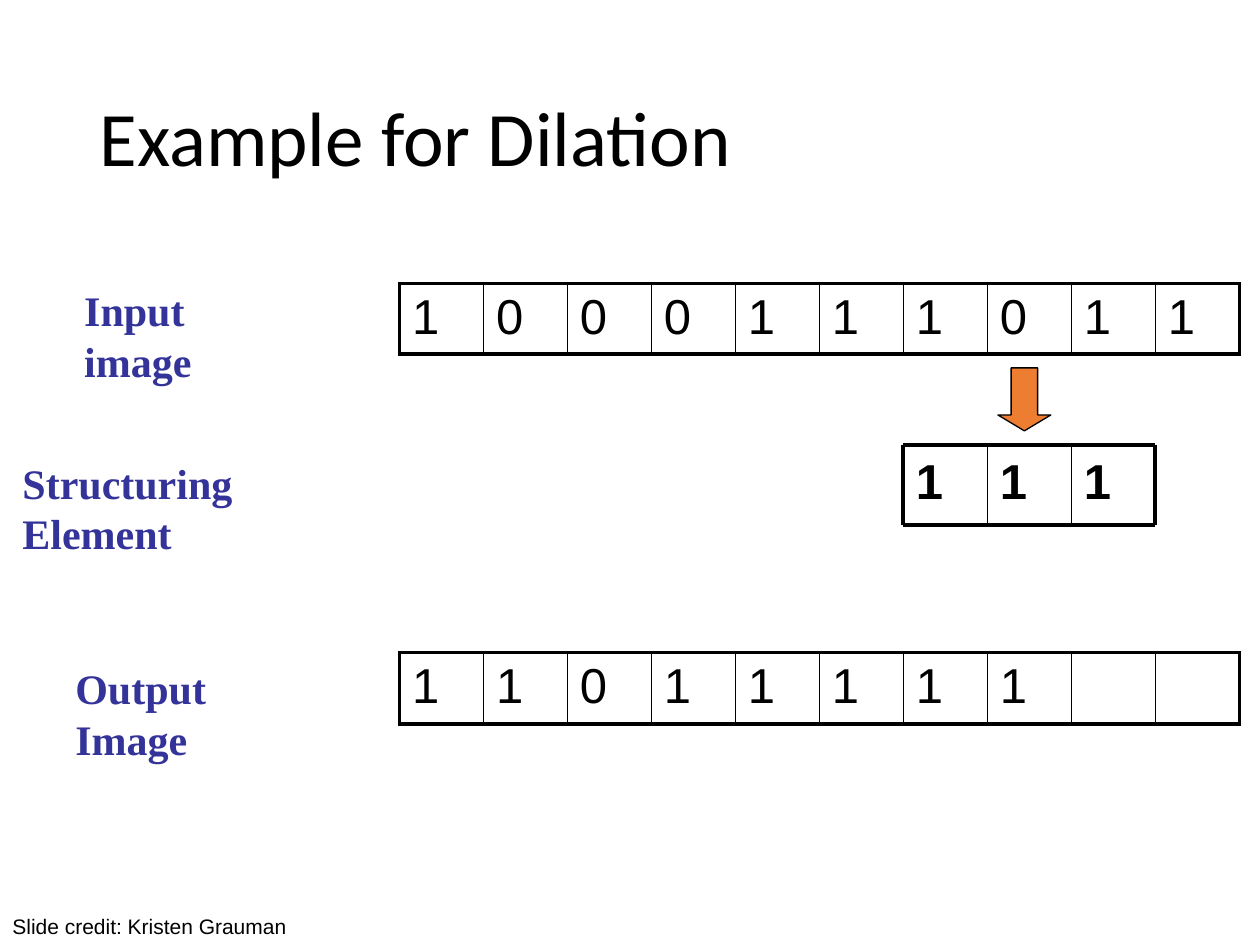
import pptx
import pptx.util
import pptx.dml.color
import pptx.enum.shapes
import pptx.enum.text
import pptx.oxml.ns
from lxml import etree
from pptx.util import Inches

COLORS = {"ink": "000000", "label": "333399", "arrow": "ED7D31"}
CELL = 2 / 3
THICK, THIN = 2.25, 1
GRID_LEFT = 3.17


def color(name):
    return pptx.dml.color.RGBColor.from_string(COLORS[name])


def add_run(paragraph, text, size, font="Arial", ink="ink", bold=False):
    run = paragraph.add_run()
    run.text = text
    run.font.size = pptx.util.Pt(size)
    run.font.name = font
    run.font.bold = bold
    run.font.color.rgb = color(ink)


def add_title(slide, text):
    title = slide.shapes.title
    title.left, title.top = Inches(0.69), Inches(0.4)
    title.width, title.height = Inches(8.62), Inches(1.45)
    title.text_frame.auto_size = pptx.enum.text.MSO_AUTO_SIZE.NONE
    title.text_frame.vertical_anchor = pptx.enum.text.MSO_ANCHOR.MIDDLE
    paragraph = title.text_frame.paragraphs[0]
    paragraph.alignment = pptx.enum.text.PP_ALIGN.LEFT
    paragraph.line_spacing = 0.9
    add_run(paragraph, text, 44, "Calibri")


def add_text(slide, text, left, top, width, height, size, **style):
    box = slide.shapes.add_textbox(Inches(left), Inches(top), Inches(width), Inches(height))
    box.text_frame.word_wrap = True
    add_run(box.text_frame.paragraphs[0], text, size, **style)


def add_label(slide, text, left, top, width):
    add_text(slide, text, left, top, width, 0.5, 24,
             font="Times New Roman", ink="label", bold=True)


def set_border(cell, side, weight):
    properties = cell._tc.get_or_add_tcPr()
    line = etree.SubElement(properties, pptx.oxml.ns.qn(f"a:ln{side}"),
                            w=str(int(pptx.util.Pt(weight))))
    fill = etree.SubElement(line, pptx.oxml.ns.qn("a:solidFill"))
    etree.SubElement(fill, pptx.oxml.ns.qn("a:srgbClr"), val=COLORS["ink"])


def add_pixel_row(slide, values, top):
    count = len(values)
    table = slide.shapes.add_table(1, count, Inches(GRID_LEFT), Inches(top),
                                   Inches(CELL * count), Inches(0.56)).table
    table.first_row = table.horz_banding = False
    for index, value in enumerate(values):
        table.columns[index].width = Inches(CELL)
        cell = table.cell(0, index)
        set_border(cell, "L", THICK if index == 0 else THIN)
        set_border(cell, "R", THICK if index == count - 1 else THIN)
        set_border(cell, "T", THICK)
        set_border(cell, "B", THICK)
        cell.fill.background()
        if value is not None:
            add_run(cell.text_frame.paragraphs[0], str(value), 28)


def add_line(slide, start, end, weight):
    line = slide.shapes.add_connector(pptx.enum.shapes.MSO_CONNECTOR.STRAIGHT,
                                      *map(Inches, start + end))
    line.line.color.rgb = color("ink")
    line.line.width = pptx.util.Pt(weight)
    etree.SubElement(line._element.spPr, pptx.oxml.ns.qn("a:effectLst"))


def add_structuring_element(slide, values, first_column, top, height):
    count = len(values)
    edges = [GRID_LEFT + CELL * (first_column + step) for step in range(count + 1)]
    bottom = top + height
    for value, left in zip(values, edges):
        add_text(slide, str(value), left, top, CELL, height, 28, bold=True)
    for y in (top, bottom):
        add_line(slide, (edges[0], y), (edges[-1], y), THICK)
    for index, x in enumerate(edges):
        add_line(slide, (x, top), (x, bottom), THICK if index in (0, count) else THIN)


def add_down_arrow(slide, left, top, width, height):
    arrow = slide.shapes.add_shape(pptx.enum.shapes.MSO_SHAPE.DOWN_ARROW, Inches(left),
                                   Inches(top), Inches(width), Inches(height))
    arrow.adjustments[0], arrow.adjustments[1] = 0.5, 0.3
    arrow.shadow.inherit = False
    arrow.fill.solid()
    arrow.fill.fore_color.rgb = color("arrow")
    arrow.line.color.rgb = color("ink")
    arrow.line.width = pptx.util.Pt(0.75)


def main():
    presentation = pptx.Presentation()
    presentation.slide_width, presentation.slide_height = Inches(10), Inches(7.5)
    slide = presentation.slides.add_slide(presentation.slide_layouts[5])
    add_title(slide, "Example for Dilation")
    add_pixel_row(slide, [1, 0, 0, 0, 1, 1, 1, 0, 1, 1], 2.25)
    add_label(slide, "Input image", 0.57, 2.21, 1.8)
    add_label(slide, "Structuring Element", 0.08, 3.58, 2.89)
    add_pixel_row(slide, [1, 1, 0, 1, 1, 1, 1, 1, None, None], 5.18)
    add_label(slide, "Output Image", 0.5, 5.21, 2.04)
    add_structuring_element(slide, [1, 1, 1], 6, 3.53, 0.64)
    add_down_arrow(slide, 7.92, 2.92, 0.42, 0.5)
    add_text(slide, "Slide credit: Kristen Grauman", 0, 7.2, 4.58, 0.3, 12)
    presentation.save("out.pptx")


if __name__ == "__main__":
    main()
